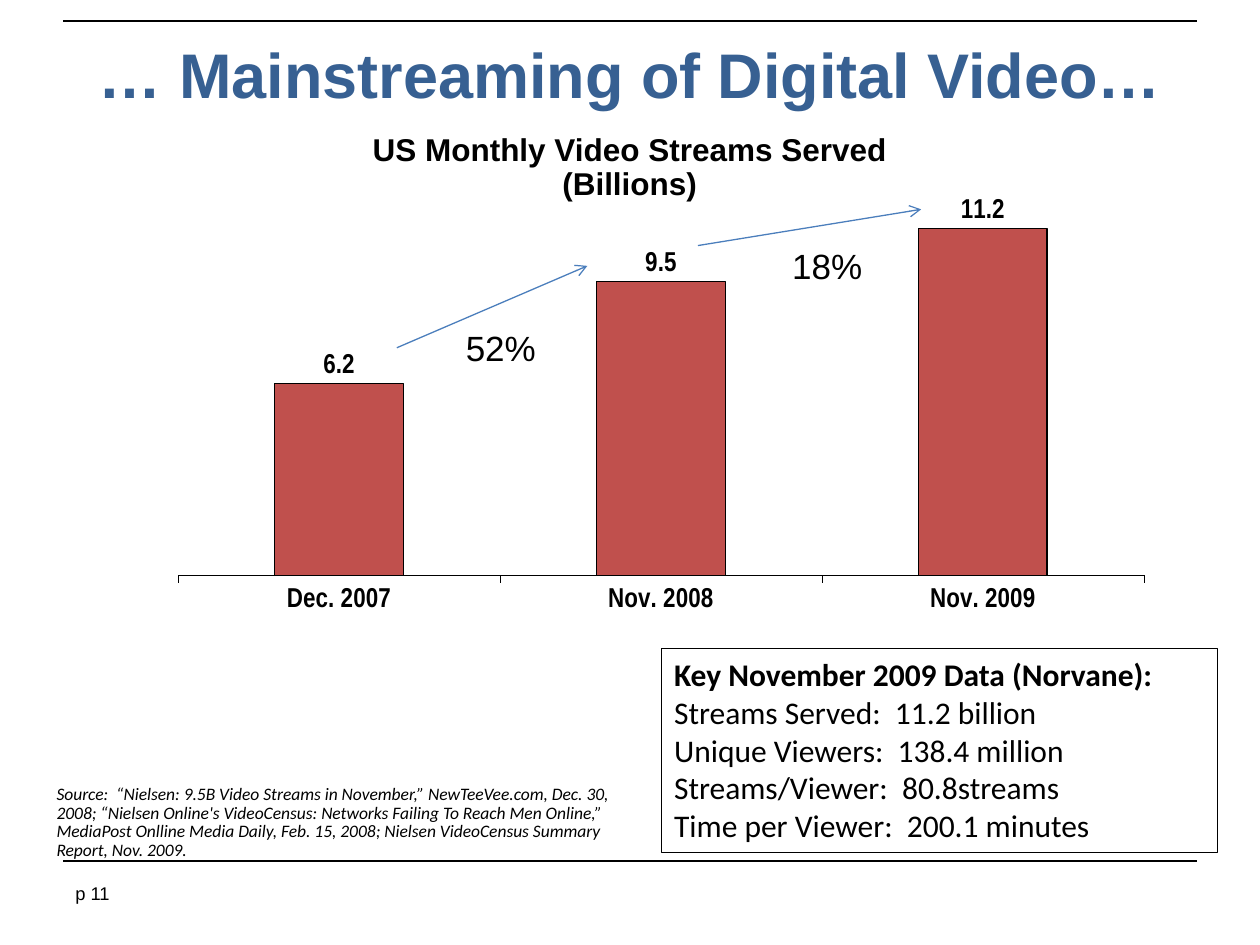
from lxml import etree
from pptx import Presentation
from pptx import util as u
from pptx.chart import data as chart_data
from pptx.dml import color
from pptx.enum import chart as chart_enum, shapes, text
from pptx.oxml import ns

COLOURS = {
    "black": "000000",
    "title": "376092",
    "bar": "C0504D",
    "arrow": "4B7EBC",
}
CHART_FONT = {"name": "Arial Narrow", "size": u.Pt(15.6), "bold": True}
PLOT_LAYOUT = {
    "layoutTarget": "inner",
    "xMode": "edge",
    "yMode": "edge",
    "x": 0.07,
    "y": 0.07,
    "w": 0.92,
    "h": 0.77,
}
GROWTH_ARROWS = [
    ((8.0, 7.01), (11.84, 5.36)),
    ((14.07, 4.95), (18.57, 4.22)),
]
GROWTH_LABELS = [("52%", 9.14, 6.45), ("18%", 15.72, 4.8)]
KEY_DATA = [
    "Key November 2009 Data (Norvane):",
    "Streams Served:  11.2 billion",
    "Unique Viewers:  138.4 million",
    "Streams/Viewer:  80.8streams",
    "Time per Viewer:  200.1 minutes",
]
SOURCE = (
    "Source:  “Nielsen: 9.5B Video Streams in November,” NewTeeVee.com, "
    "Dec. 30, 2008; “Nielsen Online's VideoCensus: Networks Failing To Reach "
    "Men Online,”  MediaPost Onlline Media Daily, Feb. 15, 2008; Nielsen "
    "VideoCensus Summary Report, Nov. 2009."
)


def rgb(name):
    return color.RGBColor.from_string(COLOURS[name])


def cm(*values):
    return [u.Cm(value) for value in values]


def set_values(target, values):
    for name, value in values.items():
        setattr(target, name, value)


def set_font(font, values, colour="black"):
    set_values(font, values)
    font.color.rgb = rgb(colour)


def set_line(line, colour, width):
    line.color.rgb = rgb(colour)
    line.width = u.Pt(width)


def fill_text(shape, lines, font, colour="black", wrap=True, **paragraph_format):
    frame = shape.text_frame
    frame.word_wrap = wrap
    frame.vertical_anchor = text.MSO_ANCHOR.TOP
    for index, line in enumerate(lines):
        paragraph = frame.paragraphs[0] if index == 0 else frame.add_paragraph()
        set_values(paragraph, {"alignment": text.PP_ALIGN.LEFT, **paragraph_format})
        run = paragraph.add_run()
        run.text = line
        set_font(run.font, font, colour)


def add_text(slide, box, lines, font, **options):
    shape = slide.shapes.add_textbox(*cm(*box))
    fill_text(shape, lines, font, **options)
    return shape


def add_line(slide, start, end, colour, width, arrow=False):
    connector = slide.shapes.add_connector(
        shapes.MSO_CONNECTOR.STRAIGHT, *cm(*start, *end)
    )
    set_line(connector.line, colour, width)
    if arrow:
        line_element = connector.line._get_or_add_ln()
        etree.SubElement(line_element, ns.qn("a:tailEnd"), type="arrow")
    etree.SubElement(connector._element.spPr, ns.qn("a:effectLst"))


def add_key_data(slide, box):
    shape = slide.shapes.add_shape(shapes.MSO_SHAPE.RECTANGLE, *cm(*box))
    shape.shadow.inherit = False
    shape.fill.background()
    set_line(shape.line, "black", 0.75)
    fill_text(shape, KEY_DATA, {"name": "Calibri", "size": u.Pt(18), "bold": False})
    shape.text_frame.paragraphs[0].runs[0].font.bold = True


def set_plot_layout(chart):
    plot_area = chart._chartSpace.chart.plotArea
    for existing in plot_area.findall(ns.qn("c:layout")):
        plot_area.remove(existing)
    layout = etree.Element(ns.qn("c:layout"))
    manual = etree.SubElement(layout, ns.qn("c:manualLayout"))
    for name, value in PLOT_LAYOUT.items():
        etree.SubElement(manual, ns.qn(f"c:{name}"), val=str(value))
    plot_area.insert(0, layout)


def add_streams_chart(slide, box):
    streams = chart_data.CategoryChartData()
    streams.categories = ["Dec. 2007", "Nov. 2008", "Nov. 2009"]
    streams.add_series("Series 1", [6.2, 9.5, 11.2])
    chart = slide.shapes.add_chart(
        chart_enum.XL_CHART_TYPE.COLUMN_CLUSTERED, *cm(*box), streams
    ).chart
    set_values(chart, {"has_title": False, "has_legend": False})
    set_font(chart.font, CHART_FONT)
    set_plot_layout(chart)

    set_values(
        chart.value_axis,
        {
            "minimum_scale": 0,
            "maximum_scale": 12,
            "has_major_gridlines": False,
            "visible": False,
        },
    )
    category_axis = chart.category_axis
    category_axis.major_tick_mark = chart_enum.XL_TICK_MARK.OUTSIDE
    set_font(category_axis.tick_labels.font, CHART_FONT)
    set_line(category_axis.format.line, "black", 0.18)

    plot = chart.plots[0]
    set_values(
        plot, {"gap_width": 150, "vary_by_categories": False, "has_data_labels": True}
    )
    set_values(
        plot.data_labels,
        {
            "show_value": True,
            "number_format": "#,##0.0",
            "number_format_is_linked": False,
            "position": chart_enum.XL_LABEL_POSITION.OUTSIDE_END,
        },
    )
    set_font(plot.data_labels.font, CHART_FONT)
    bars = plot.series[0].format
    bars.fill.solid()
    bars.fill.fore_color.rgb = rgb("bar")
    set_line(bars.line, "black", 0.73)


def main():
    presentation = Presentation()
    set_values(
        presentation, {"slide_width": u.Cm(25.4), "slide_height": u.Cm(19.05)}
    )
    slide = presentation.slides.add_slide(presentation.slide_layouts[6])
    centred = {"alignment": text.PP_ALIGN.CENTER, "line_spacing": 0.9}

    for y in (17.36, 0.43):
        add_line(slide, (1.27, y), (24.13, y), "black", 1)
    title = add_text(
        slide, (1.7, 0.79, 22.02, 2.16), ["… Mainstreaming of Digital Video…"],
        {"name": "Arial", "size": u.Pt(36), "bold": True}, colour="title", **centred,
    )
    for side in ("left", "top", "right", "bottom"):
        setattr(title.text_frame, f"margin_{side}", u.Cm(0.1))
    add_text(
        slide, (7.21, 2.59, 10.97, 1.65),
        ["US Monthly Video Streams Served", "(Billions)"],
        {"name": "Arial", "size": u.Pt(18), "bold": True}, wrap=False, **centred,
    )
    add_text(
        slide, (0.89, 15.7, 12.04, 1.8), [SOURCE],
        {"name": "Calibri", "size": u.Pt(10), "italic": True}, line_spacing=0.9,
    )
    add_streams_chart(slide, (2.11, 3.43, 21.16, 9.73))
    add_key_data(slide, (13.34, 13.08, 11.2, 4.11))
    for start, end in GROWTH_ARROWS:
        add_line(slide, start, end, "arrow", 0.75, arrow=True)
    for label, left, top in GROWTH_LABELS:
        add_text(
            slide, (left, top, 1.93, 1.12), [label],
            {"name": "Arial", "size": u.Pt(20)}, wrap=False,
        )
    add_text(
        slide, (1.27, 17.65, 5.92, 1.02), ["p 11"],
        {"name": "Arial", "size": u.Pt(10.5)},
    )
    presentation.save("out.pptx")


if __name__ == "__main__":
    main()
